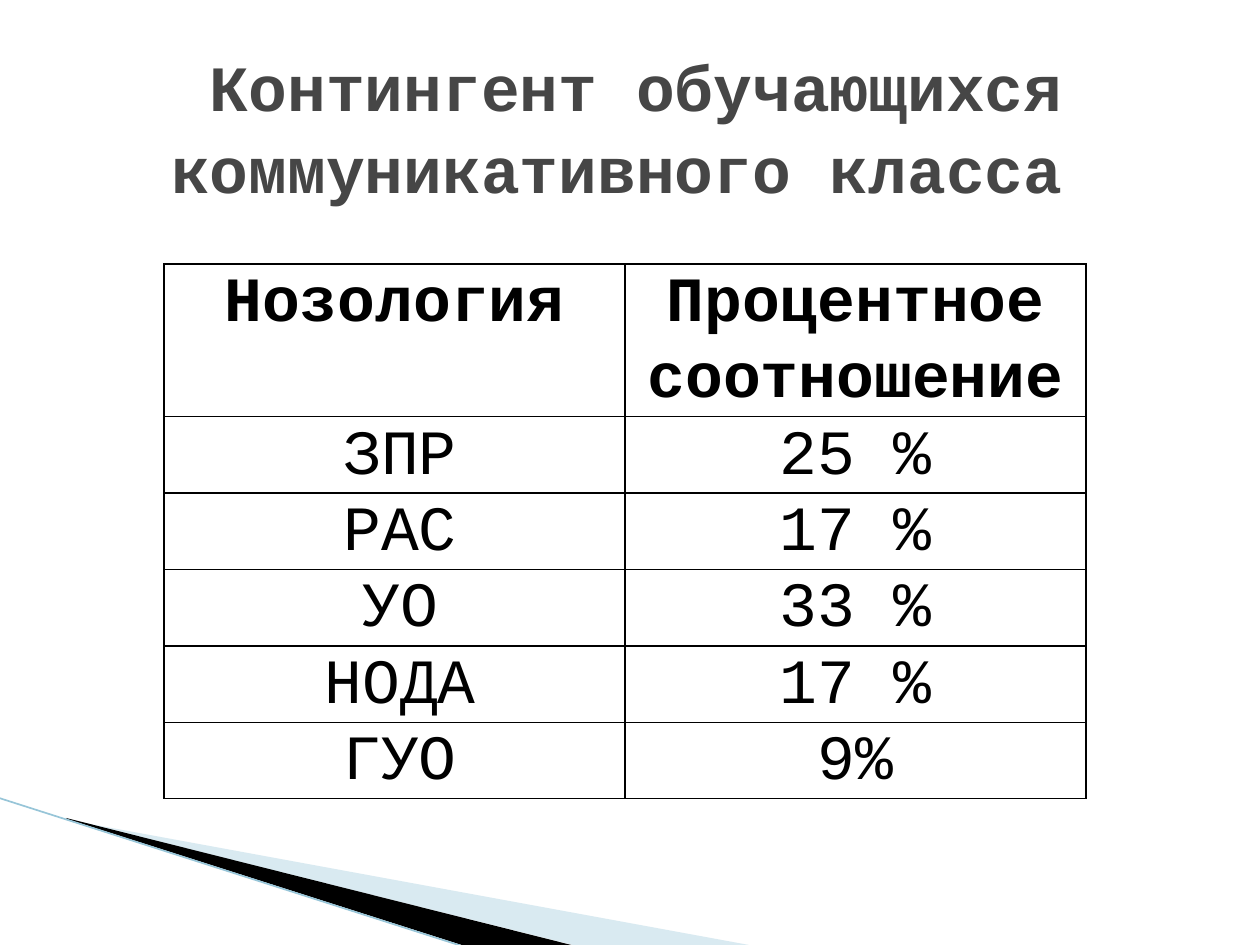
from lxml.etree import SubElement
from pptx import Presentation
from pptx.dml.color import RGBColor
from pptx.enum.shapes import MSO_CONNECTOR
from pptx.enum.text import MSO_ANCHOR, PP_ALIGN
from pptx.oxml.ns import qn
from pptx.util import Pt

EMU_PER_PX = 914400 / 126
FONT = "Courier New"
COLORS = {"title": "464646", "text": "000000", "border": "000000",
          "light": "A0CBDC", "dark": "000000", "edge": "97C5D8"}
CONTINGENT = [("Нозология", "Процентное соотношение"), ("ЗПР", "25 %"), ("РАС", "17 %"),
              ("УО", "33 %"), ("НОДА", "17 %"), ("ГУО", "9%")]


def px(length):
    """Turn pixels into EMU."""
    return round(length * EMU_PER_PX)


def rgb(name):
    """Look up a named colour."""
    return RGBColor.from_string(COLORS[name])


def write(paragraph, wording, size, color, bold):
    """Add one centred run to a paragraph."""
    paragraph.alignment = PP_ALIGN.CENTER
    paragraph.line_spacing = 1.07
    run = paragraph.add_run()
    run.text = wording
    run.font.name = FONT
    run.font.size = Pt(size)
    run.font.bold = bold
    run.font.color.rgb = rgb(color)


def add_wedge(slide, left, top, points, color, opacity=100):
    """Draw a filled wedge from points relative to its corner."""
    corners = [(left + x, top + y) for x, y in points]
    builder = slide.shapes.build_freeform(*corners[0], scale=EMU_PER_PX)
    builder.add_line_segments(corners[1:], close=True)
    wedge = builder.convert_to_shape()
    wedge.shadow.inherit = False
    wedge.fill.solid()
    wedge.fill.fore_color.rgb = rgb(color)
    wedge.line.fill.background()
    if opacity < 100:
        tint = wedge.fill._xPr.find(qn("a:solidFill"))[0]
        SubElement(tint, qn("a:alpha"), val=str(opacity * 1000))


def add_corner(slide, left, top, width, height):
    """Draw the swoosh in the lower left corner."""
    add_wedge(slide, left + 69, top + 21, [(0, 1), (681, 126), (505, 126), (0, 0)], "light", 40)
    add_wedge(slide, left + 67, top + 20, [(0, 0), (509, 128), (402, 129), (1, 1)], "dark")
    edge = slide.shapes.add_connector(
        MSO_CONNECTOR.STRAIGHT, px(left), px(top), px(left + width), px(top + height))
    edge.line.color.rgb = rgb("edge")
    edge.line.width = Pt(0.95)
    SubElement(edge._element.spPr, qn("a:effectLst"))


def add_title(slide, left, top, width, height):
    """Place the heading in the title placeholder."""
    title = slide.shapes.title
    title.left, title.top, title.width, title.height = map(px, (left, top, width, height))
    frame = title.text_frame
    frame.word_wrap = True
    frame.vertical_anchor = MSO_ANCHOR.MIDDLE
    frame.margin_top, frame.margin_bottom = px(20), px(6)
    write(frame.paragraphs[0], " Контингент обучающихся коммуникативного класса",
          36.9, "title", True)


def set_borders(cell):
    """Put a thin line on each side of a cell."""
    properties = cell._tc.get_or_add_tcPr()
    for place, side in enumerate(("lnL", "lnR", "lnT", "lnB")):
        border = SubElement(properties, qn(f"a:{side}"), w=str(Pt(1)))
        fill = SubElement(border, qn("a:solidFill"))
        SubElement(fill, qn("a:srgbClr"), val=COLORS["border"])
        properties.insert(place, border)


def add_contingent(slide, left, top, width, row_height):
    """Build the table of shares, with a header two lines high."""
    height = row_height * (len(CONTINGENT) + 1)
    table = slide.shapes.add_table(
        len(CONTINGENT), 2, px(left), px(top), px(width), px(height)).table
    table.horz_banding = False
    for row, shares in enumerate(CONTINGENT):
        header = row == 0
        table.rows[row].height = px(row_height * (2 if header else 1))
        for column, wording in enumerate(shares):
            cell = table.cell(row, column)
            cell.margin_left = cell.margin_right = px(9)
            cell.margin_top = cell.margin_bottom = 0
            cell.fill.background()
            set_borders(cell)
            paragraph = cell.text_frame.paragraphs[0]
            write(paragraph, wording, 36, "text", header)
            if column == 0 and not header:
                paragraph._p.get_or_add_pPr().set("marL", str(px(11)))


def main():
    """Build and save the slide."""
    deck = Presentation()
    deck.slide_width, deck.slide_height = px(1260), px(945)
    slide = deck.slides.add_slide(deck.slide_layouts[5])
    add_corner(slide, -1, 798, 469, 150)
    add_contingent(slide, 164, 264, 922, 76)
    add_title(slide, 0, 38, 1235, 158)
    deck.save("out.pptx")


if __name__ == "__main__":
    main()
